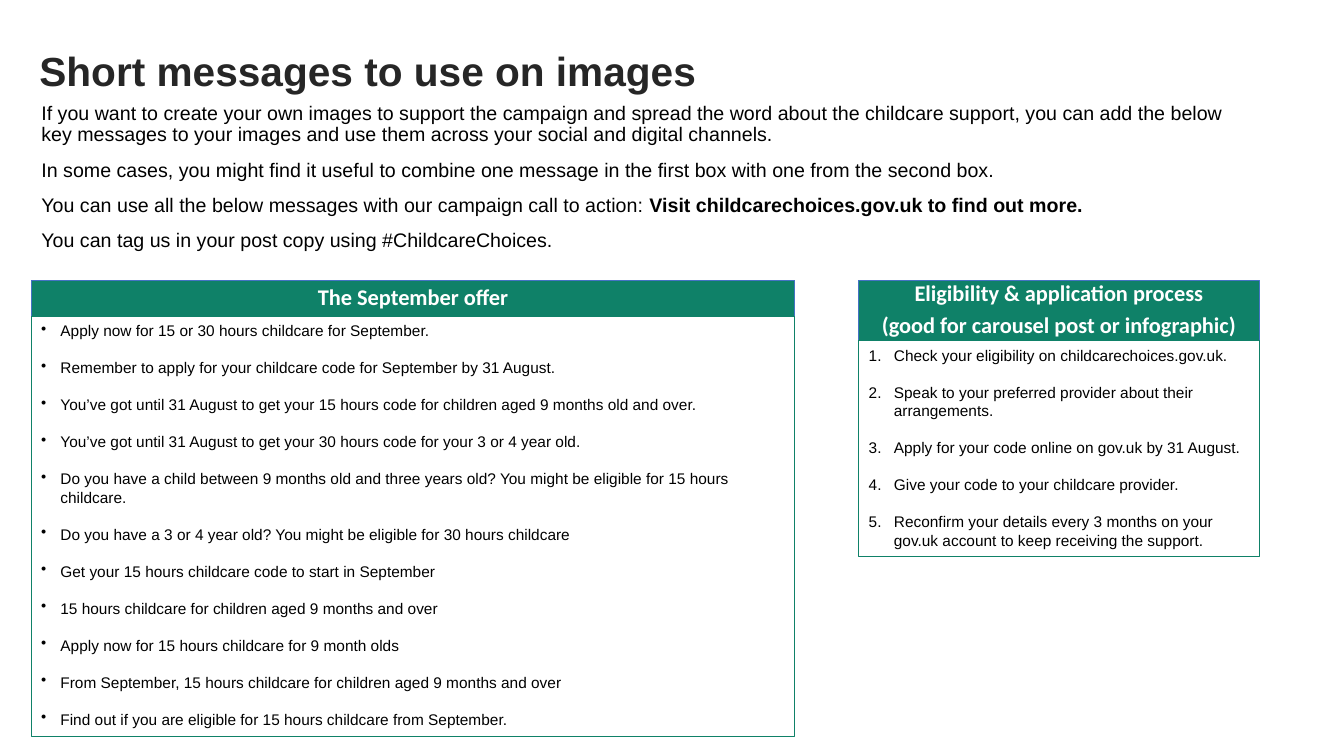
"""Build the slide of short campaign messages with two headed message boxes."""
import pptx
import pptx.dml.color
import pptx.enum.shapes
import pptx.enum.text
import pptx.oxml.ns
import pptx.util
import lxml.etree

COLOURS = {"green": "0F8168", "edge": "4472C4", "white": "FFFFFF",
           "black": "000000", "title": "262626"}
ALIGN = pptx.enum.text.PP_ALIGN
ANCHOR = pptx.enum.text.MSO_ANCHOR
RECTANGLE = pptx.enum.shapes.MSO_SHAPE.RECTANGLE

deck = pptx.Presentation()
deck.slide_width = pptx.util.Inches(13.33)
deck.slide_height = pptx.util.Inches(7.5)
slide = deck.slides.add_slide(deck.slide_layouts[1])


def area(left, top, width, height):
    """Turn percentages of the slide into left, top, width and height."""
    return (int(deck.slide_width * left / 100), int(deck.slide_height * top / 100),
            int(deck.slide_width * width / 100), int(deck.slide_height * height / 100))


def write(shape, lines, font, size, colour, bold=False, align=ALIGN.LEFT,
          anchor=ANCHOR.TOP, spacing=1.0, gap=0, indent=0, bullet=("buNone", {})):
    """Fill a shape with formatted paragraphs; ** switches bold on and off."""
    frame = shape.text_frame
    frame.word_wrap = True
    frame.auto_size = pptx.enum.text.MSO_AUTO_SIZE.NONE
    frame.vertical_anchor = anchor
    for number, line in enumerate(lines):
        paragraph = frame.paragraphs[0] if number == 0 else frame.add_paragraph()
        properties = paragraph._p.get_or_add_pPr()
        properties.set("marL", str(pptx.util.Inches(indent)))
        properties.set("indent", str(-pptx.util.Inches(indent)))
        lxml.etree.SubElement(properties, pptx.oxml.ns.qn("a:" + bullet[0]), bullet[1])
        paragraph.alignment = align
        paragraph.line_spacing = spacing
        paragraph.space_before = pptx.util.Pt(gap if number else 0)
        paragraph.space_after = pptx.util.Pt(0)
        for part, words in enumerate(line.split("**")):
            if words:
                run = paragraph.add_run()
                run.text = words
                run.font.name = font
                run.font.size = pptx.util.Pt(size)
                run.font.bold = bold or part % 2 == 1
                run.font.color.rgb = pptx.dml.color.RGBColor.from_string(COLOURS[colour])


MARGIN, CONTENT_WIDTH = 2.33, 91.37
BOXES_TOP = 37.07

heading = slide.shapes.title
heading.left, heading.top, heading.width, heading.height = area(0, 0, 89.87, 19.33)
heading.text_frame.margin_left = pptx.util.Inches(0.39)
write(heading, ["Short messages to use on images"], "Arial", 29, "title",
      bold=True, anchor=ANCHOR.MIDDLE, spacing=0.9)

guidance = slide.placeholders[1]
guidance.left, guidance.top, guidance.width, guidance.height = area(
    MARGIN, 13.07, CONTENT_WIDTH, 20.8)
write(guidance, [
    "If you want to create your own images to support the campaign and spread the word "
    "about the childcare support, you can add the below key messages to your images and "
    "use them across your social and digital channels.",
    "In some cases, you might find it useful to combine one message in the first box "
    "with one from the second box.",
    "You can use all the below messages with our campaign call to action: "
    "**Visit childcarechoices.gov.uk to find out more.**",
    "You can tag us in your post copy using #ChildcareChoices.",
], "Arial", 14, "black", spacing=0.9, gap=10)

september_messages = [
    "Apply now for 15 or 30 hours childcare for September.",
    "Remember to apply for your childcare code for September by 31 August.",
    "You’ve got until 31 August to get your 15 hours code for children aged 9 months old and over.",
    "You’ve got until 31 August to get your 30 hours code for your 3 or 4 year old.",
    "Do you have a child between 9 months old and three years old? "
    "You might be eligible for 15 hours childcare.",
    "Do you have a 3 or 4 year old? You might be eligible for 30 hours childcare",
    "Get your 15 hours childcare code to start in September",
    "15 hours childcare for children aged 9 months and over",
    "Apply now for 15 hours childcare for 9 month olds",
    "From September, 15 hours childcare for children aged 9 months and over",
    "Find out if you are eligible for 15 hours childcare from September.",
]
application_steps = [
    "Check your eligibility on childcarechoices.gov.uk.",
    "Speak to your preferred provider about their arrangements.",
    "Apply for your code online on gov.uk by 31 August.",
    "Give your code to your childcare provider.",
    "Reconfirm your details every 3 months on your gov.uk account to keep receiving the support.",
]
STEPS_WIDTH = 29.8
columns = [
    (MARGIN, 56.8, 4.8, 55.6, ["The September offer"],
     september_messages, 0.19, ("buChar", {"char": "•"})),
    (MARGIN + CONTENT_WIDTH - STEPS_WIDTH, STEPS_WIDTH, 8, 28.53,
     ["Eligibility & application process", "(good for carousel post or infographic)"],
     application_steps, 0.25, ("buAutoNum", {"type": "arabicPeriod"})),
]

for left, width, header_height, list_height, header_lines, messages, indent, bullet in columns:
    header = slide.shapes.add_shape(RECTANGLE, *area(left, BOXES_TOP, width, header_height))
    header.fill.solid()
    header.fill.fore_color.rgb = pptx.dml.color.RGBColor.from_string(COLOURS["green"])
    message_box = slide.shapes.add_shape(
        RECTANGLE, *area(left, BOXES_TOP + header_height, width, list_height))
    message_box.fill.background()
    for box, edge in ((header, "edge"), (message_box, "green")):
        box.shadow.inherit = False
        box.line.color.rgb = pptx.dml.color.RGBColor.from_string(COLOURS[edge])
        box.line.width = pptx.util.Pt(1)
    write(header, header_lines, "Calibri", 16, "white", bold=True, align=ALIGN.CENTER,
          anchor=ANCHOR.MIDDLE, spacing=0.9, gap=5.5)
    write(message_box, messages, "Arial", 11, "black", gap=13.2,
          indent=indent, bullet=bullet)

deck.save("out.pptx")
